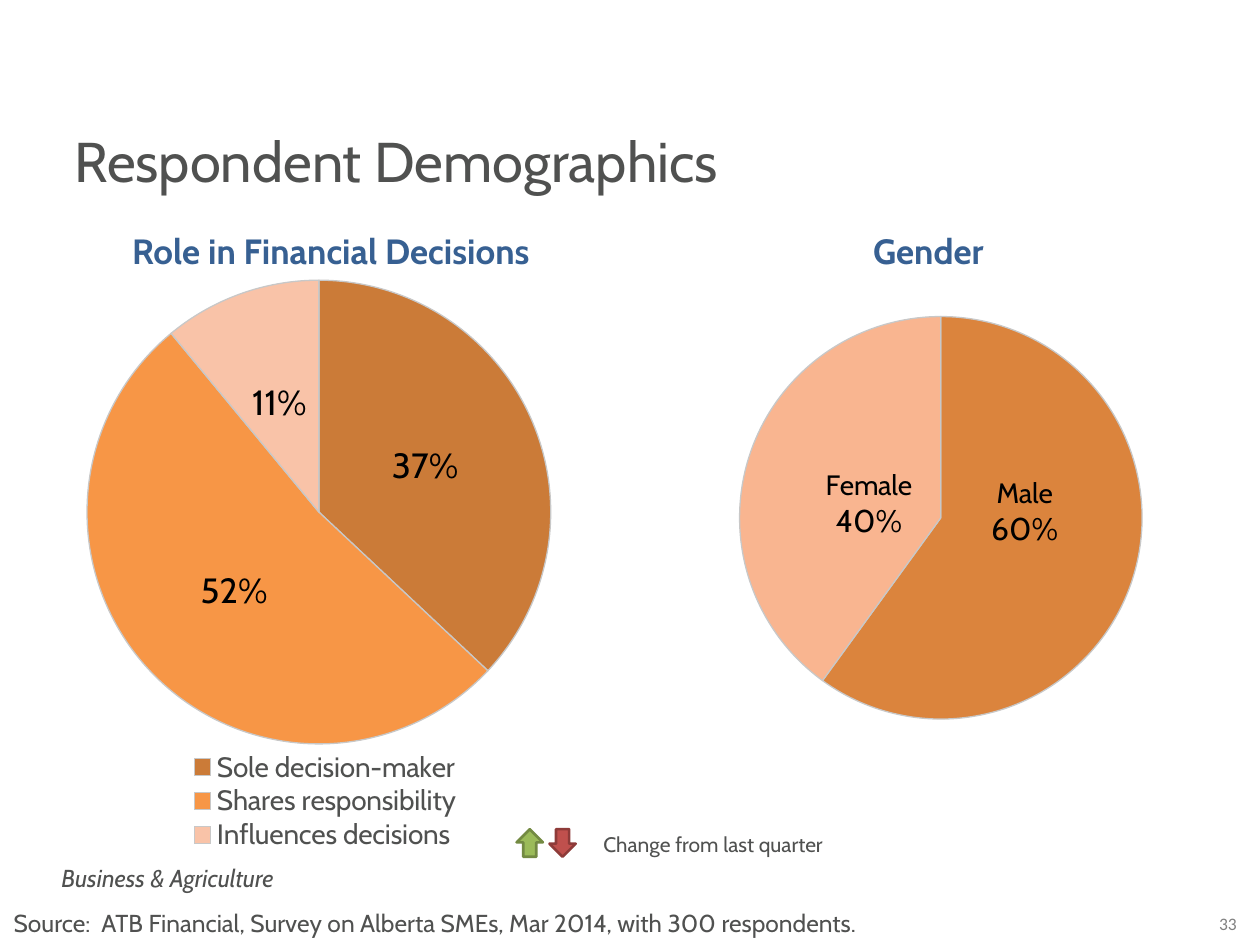
from lxml import etree
from pptx import Presentation
from pptx import util as u
from pptx.chart import data
from pptx.dml.color import RGBColor
from pptx.enum import chart as ch, shapes, text
from pptx.oxml import ns

INK = {
    "text": "505150", "head": "376092", "page": "808080", "black": "000000",
    "edge": "C8C8C8", "sole": "CB7B38", "share": "F79646", "sway": "F9C3A8",
    "male": "DB843D", "female": "F9B590", "up": "9BBB59", "upline": "738A42",
    "down": "C0504D", "downline": "8E3B39",
}


def color(name):
    return RGBColor.from_string(INK[name])


def place(parent, after, **spots):
    """Insert a manual chart layout behind a given child."""
    old = parent.find(ns.qn("c:layout"))
    if old is not None:
        parent.remove(old)
    lay = etree.Element(ns.qn("c:layout"))
    man = etree.SubElement(lay, ns.qn("c:manualLayout"))
    for tag, val in spots.items():
        etree.SubElement(man, ns.qn("c:" + tag)).set("val", str(val))
    index = 0 if after is None else parent.index(after) + 1
    parent.insert(index, lay)


def frame(x, y, w, h):
    """Return the layout values of a box inside a chart."""
    return dict(xMode="edge", yMode="edge", x=x, y=y, w=w, h=h)


class Deck:
    """Holds the style and the current slide."""

    def __init__(self, font="Cabin"):
        self.font = font
        self.prs = Presentation()
        self.prs.slide_width, self.prs.slide_height = u.Pt(720), u.Pt(540)
        self.slide = self.prs.slides.add_slide(self.prs.slide_layouts[5])

    def style(self, font, size, ink, bold=False, italic=False, face=None):
        font.name, font.size = face or self.font, u.Pt(size)
        font.bold, font.italic = bold, italic
        font.color.rgb = color(ink)

    def fill(self, shape, words, size, ink="text", mid=False, **look):
        box = shape.text_frame
        box.word_wrap = True
        box.auto_size = text.MSO_AUTO_SIZE.NONE
        box.vertical_anchor = text.MSO_ANCHOR.TOP
        para = box.paragraphs[0]
        para.alignment = text.PP_ALIGN.CENTER if mid else text.PP_ALIGN.LEFT
        run = para.add_run()
        run.text = words
        self.style(run.font, size, ink, **look)

    def title(self, at, words, size):
        shape = self.slide.shapes.title
        shape.left, shape.top, shape.width, shape.height = map(u.Pt, at)
        self.fill(shape, words, size)

    def label(self, at, words, size, ink="text", **look):
        shape = self.slide.shapes.add_textbox(*map(u.Pt, at))
        self.fill(shape, words, size, ink, **look)

    def arrow(self, at, ink, turn=0):
        kind = shapes.MSO_SHAPE.DOWN_ARROW
        shape = self.slide.shapes.add_shape(kind, *map(u.Pt, at))
        shape.shadow.inherit = False
        shape.rotation = turn
        shape.fill.solid()
        shape.fill.fore_color.rgb = color(ink)
        shape.line.color.rgb = color(ink + "line")
        shape.line.width = u.Pt(1.5)

    def pie(self, at, parts, plot):
        """Add a pie of (name, value, ink) parts and return its chart."""
        book = data.CategoryChartData(number_format="0")
        book.categories = [name for name, _, _ in parts]
        book.add_series("Series 1", [val for _, val, _ in parts])
        kind = ch.XL_CHART_TYPE.PIE
        chart = self.slide.shapes.add_chart(kind, *map(u.Pt, at), book).chart
        chart.has_title = chart.has_legend = False
        self.style(chart.font, 18, "black")
        pie = chart.plots[0]
        pie.vary_by_categories = True
        for i, (_, _, ink) in enumerate(parts):
            form = pie.series[0].points[i].format
            form.fill.solid()
            form.fill.fore_color.rgb = color(ink)
            form.line.color.rgb = color("edge")
            form.line.width = u.Pt(0.75)
        area = chart.element.find(".//" + ns.qn("c:plotArea"))
        place(area, None, layoutTarget="inner", **frame(*plot))
        return chart

    def shares(self, chart, size):
        tags = chart.plots[0].series[0].data_labels
        tags.show_value, tags.show_percentage = False, True
        tags.number_format, tags.number_format_is_linked = "0%", False
        tags.position = ch.XL_LABEL_POSITION.CENTER
        self.style(tags.font, size, "black")

    def legend(self, chart, size, spot):
        chart.has_legend = True
        key = chart.legend
        key.position = ch.XL_LEGEND_POSITION.BOTTOM
        key.include_in_layout = False
        self.style(key.font, size, "text")
        node = chart.element.find(".//" + ns.qn("c:legend"))
        place(node, node.find(ns.qn("c:legendPos")), **frame(*spot))

    def tag(self, chart, i, lines, shift):
        tag = chart.plots[0].series[0].points[i].data_label
        box = tag.text_frame
        for n, (words, size) in enumerate(lines):
            para = box.add_paragraph() if n else box.paragraphs[0]
            run = para.add_run()
            run.text = words
            self.style(run.font, size, "black")
        tag.position = ch.XL_LABEL_POSITION.CENTER
        node = chart.element.findall(".//" + ns.qn("c:dLbl"))[i]
        place(node, node.find(ns.qn("c:idx")), x=shift[0], y=shift[1])


def main():
    deck = Deck()
    deck.label((684, 518.4, 35.3, 19.4), "33", 10, "page", mid=True, face="Calibri")
    deck.label((28, 489.6, 202, 24.5), "Business & Agriculture", 14, italic=True)

    sexes = [("Male", 60, "male"), ("Female", 40, "female")]
    shifts = [(-0.02, -0.06), (0.04, 0.03)]
    chart = deck.pie((361.4, 126, 339, 343.4), sexes, (0.18, 0.16, 0.68, 0.67))
    for i, (name, val, _) in enumerate(sexes):
        deck.tag(chart, i, [(name, 16), (f"{val}%", 18)], shifts[i])

    roles = [
        ("Sole decision-maker", 37, "sole"),
        ("Shares responsibility", 52, "share"),
        ("Influences decisions", 11, "sway"),
    ]
    chart = deck.pie((8, 149.8, 352, 344.2), roles, (0.03, 0.03, 0.93, 0.77))
    deck.shares(chart, 20)
    deck.legend(chart, 16, (0.28, 0.81, 0.45, 0.17))

    deck.title((35.3, 68.4, 420.5, 46), "Respondent Demographics", 32)
    deck.label(
        (0.7, 515.5, 569.5, 24.5),
        "Source:  ATB Financial, Survey on Alberta SMEs, Mar 2014, with 300 respondents.",
        14,
    )
    for x, w, words in [(52.6, 273, "Role in Financial Decisions"), (450, 161, "Gender")]:
        deck.label((x, 127.4, w, 31.7), words, 20, "head", mid=True, bold=True)
    for x, ink, turn in [(295.2, "up", 180), (314, "down", 0)]:
        deck.arrow((x, 473.8, 15, 15.8), ink, turn)
    deck.label((337.7, 471.6, 173.5, 22.3), "Change from last quarter", 12)
    deck.prs.save("out.pptx")


if __name__ == "__main__":
    main()
